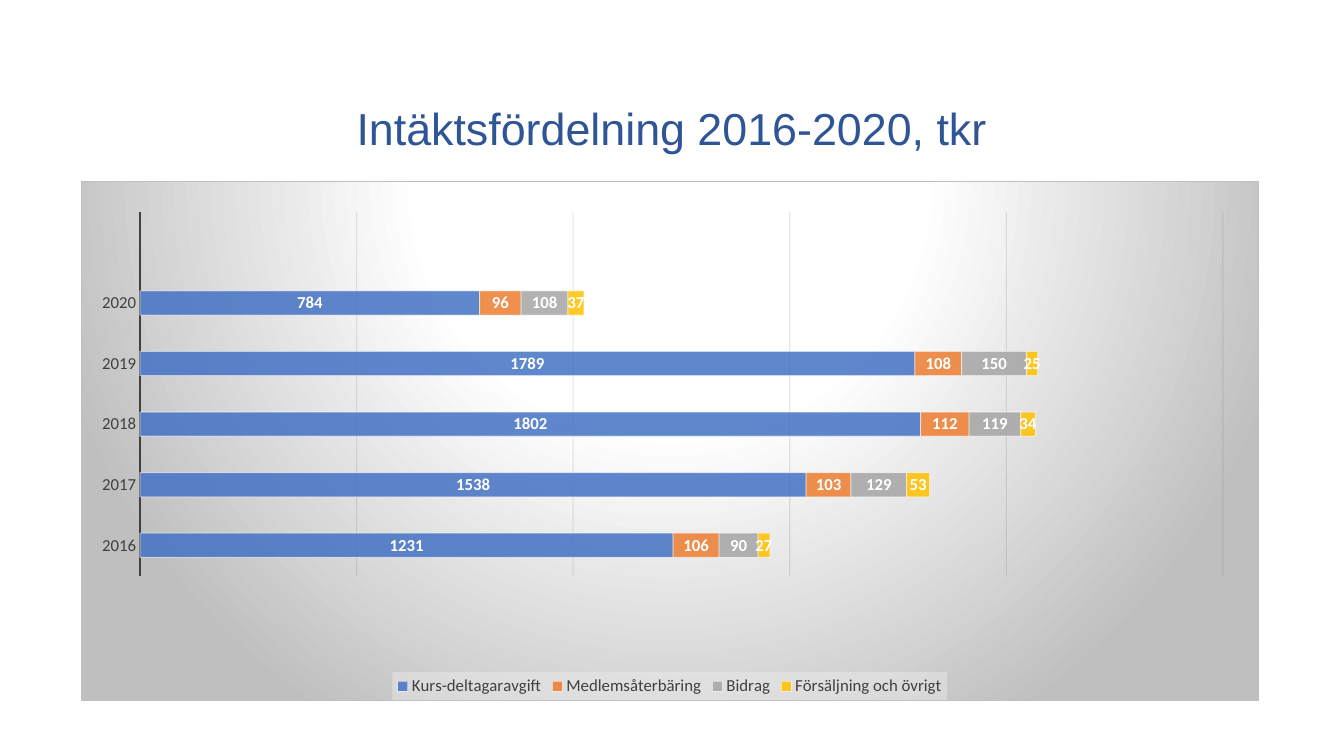
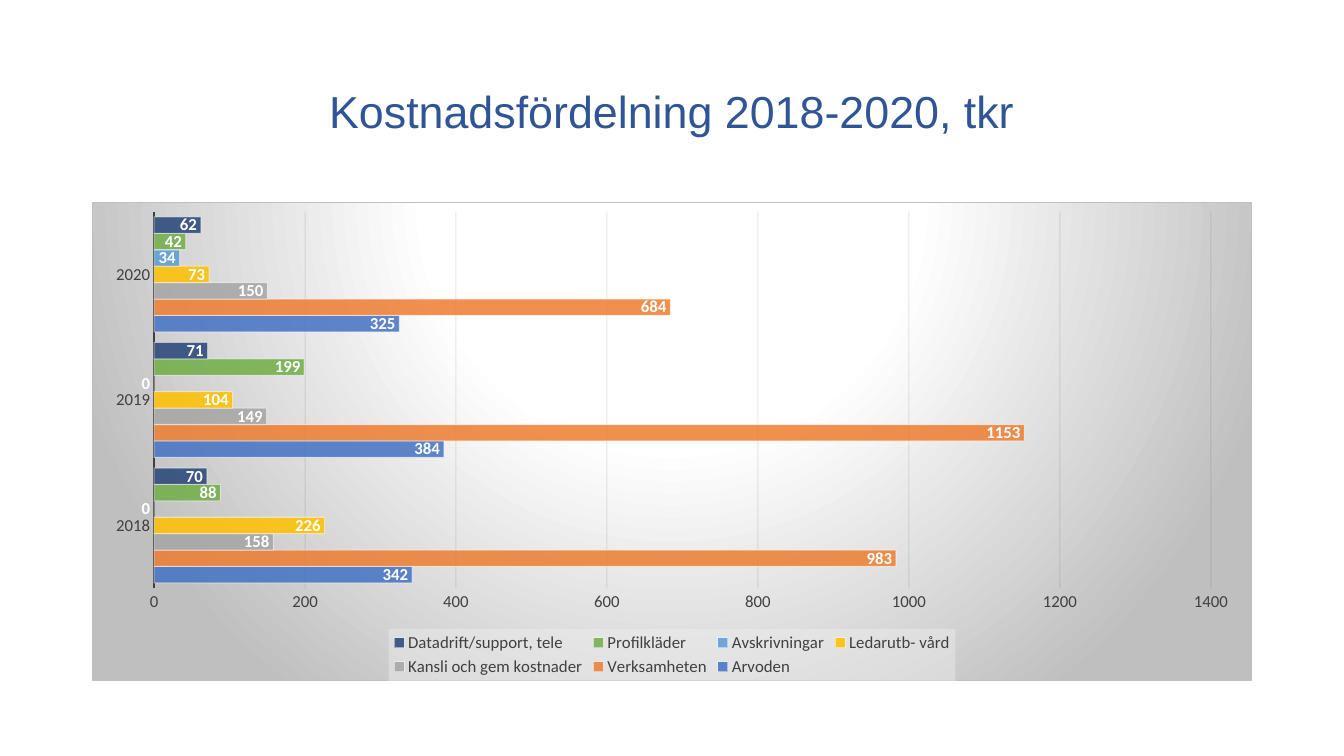
import pptx
import pptx.chart.data
import pptx.dml.color
import pptx.enum.chart
import pptx.enum.text
import pptx.oxml
import pptx.oxml.ns
import pptx.util

Pt = pptx.util.Pt
KINDS = pptx.enum.chart.XL_CHART_TYPE
SPOTS = pptx.enum.chart.XL_LABEL_POSITION
TICKS = pptx.enum.chart.XL_TICK_MARK

BLUE, WHITE, DARK, GRID = "2F5597", "FFFFFF", "404040", "0D0D0D"
HUES = ["4472C4", "ED7D31", "A5A5A5", "FFC000", "5B9BD5", "70AD47", "264478"]
SPACES = pptx.oxml.ns.nsdecls("c", "a")

PANEL = """<a:gradFill><a:gsLst>
<a:gs pos="0"><a:srgbClr val="FFFFFF"/></a:gs>
<a:gs pos="39000"><a:srgbClr val="FFFFFF"/></a:gs>
<a:gs pos="100000"><a:srgbClr val="BFBFBF"/></a:gs></a:gsLst>
<a:path path="circle"><a:fillToRect l="50000" t="-80000" r="50000" b="180000"/></a:path>
</a:gradFill><a:ln w="9525"><a:solidFill><a:srgbClr val="BFBFBF"/></a:solidFill></a:ln>"""
VEIL = """<a:solidFill><a:srgbClr val="F2F2F2"><a:alpha val="39000"/></a:srgbClr></a:solidFill>
<a:ln><a:noFill/></a:ln>"""

INCOME = {
    "Kurs-deltagaravgift": (1231, 1538, 1802, 1789, 784, None),
    "Medlemsåterbäring": (106, 103, 112, 108, 96, None),
    "Bidrag": (90, 129, 119, 150, 108, None),
    "Försäljning och övrigt": (27, 53, 34, 25, 37, None),
}
COSTS = {
    "Arvoden": (342, 384, 325),
    "Verksamheten": (983, 1153, 684),
    "Kansli och gem kostnader": (158, 149, 150),
    "Ledarutb- vård": (226, 104, 73),
    "Avskrivningar": (0, 0, 34),
    "Profilkläder": (88, 199, 42),
    "Datadrift/support, tele": (70, 71, 62),
}


def color(code):
    """Turn a hex string into a colour."""
    return pptx.dml.color.RGBColor.from_string(code)


def style(font, size, code, name="Calibri", bold=False):
    """Set size, colour, face and weight of a font."""
    font.size, font.name, font.bold = Pt(size), name, bold
    font.color.rgb = color(code)


def stroke(line, code, width):
    """Give a line its colour and width."""
    line.color.rgb = color(code)
    line.width = Pt(width)


def fade(chart, query, share):
    """Set the opacity, in percent, of the colours that a query finds."""
    for node in chart.element.xpath(query + "/a:solidFill/a:srgbClr"):
        node.append(pptx.oxml.parse_xml(f'<a:alpha {SPACES} val="{share * 1000}"/>'))


def paint(chart, query, look):
    """Fill the chart part whose text settings a query finds."""
    part = pptx.oxml.parse_xml(f"<c:spPr {SPACES}>{look}</c:spPr>")
    chart.element.xpath(query)[0].addprevious(part)


def place(chart, box):
    """Fix the inner plot area as shares of the chart."""
    area = chart.element.xpath(".//c:plotArea")[0]
    for old in area.xpath("c:layout"):
        area.remove(old)
    rules = [("layoutTarget", "inner"), ("xMode", "edge"), ("yMode", "edge")]
    rules += zip("xywh", box)
    marks = "".join(f'<c:{tag} val="{val}"/>' for tag, val in rules)
    area.insert(0, pptx.oxml.parse_xml(
        f"<c:layout {SPACES}><c:manualLayout>{marks}</c:manualLayout></c:layout>"))


def head(deck, text, height):
    """Add a slide with a centred title."""
    slide = deck.slides.add_slide(deck.slide_layouts[5])
    title = slide.shapes.title
    title.left, title.top, title.width, title.height = Pt(66), Pt(29), Pt(828), Pt(height)
    frame = title.text_frame
    frame.text = text
    frame.vertical_anchor = pptx.enum.text.MSO_ANCHOR.MIDDLE
    para = frame.paragraphs[0]
    para.alignment = pptx.enum.text.PP_ALIGN.CENTER
    para.line_spacing = 0.9
    style(para.font, 32, BLUE, "Arial")
    return slide


def axes(chart, top, step):
    """Format both axes and the grid."""
    cat, val = chart.category_axis, chart.value_axis
    for axis in (cat, val):
        axis.major_tick_mark = axis.minor_tick_mark = TICKS.NONE
        style(axis.tick_labels.font, 12, DARK)
    stroke(cat.format.line, DARK, 1.5)
    val.format.line.fill.background()
    val.minimum_scale, val.maximum_scale, val.major_unit = 0, top, step
    val.has_major_gridlines = True
    stroke(val.major_gridlines.format.line, GRID, 0.75)
    fade(chart, ".//c:majorGridlines/c:spPr/a:ln", 10)


def bars(chart, spot):
    """Colour and label each series."""
    for row, hue in zip(chart.plots[0].series, HUES):
        row.invert_if_negative = False
        row.format.fill.solid()
        row.format.fill.fore_color.rgb = color(hue)
        stroke(row.format.line, WHITE, 0.75)
        tags = row.data_labels
        tags.show_value, tags.position = True, spot
        style(tags.font, 12, WHITE, bold=True)
    fade(chart, ".//c:ser/c:spPr", 85)
    fade(chart, ".//c:ser/c:spPr/a:ln", 50)


def key(chart):
    """Add the legend below the plot."""
    chart.has_legend = True
    chart.legend.position = pptx.enum.chart.XL_LEGEND_POSITION.BOTTOM
    chart.legend.include_in_layout = False
    style(chart.legend.font, 12, DARK)
    paint(chart, ".//c:legend/c:txPr", VEIL)


def graph(slide, kind, box, cats, rows, gap, spot, top, step):
    """Add a bar chart on a shaded panel."""
    data = pptx.chart.data.CategoryChartData()
    data.categories = cats
    for name, vals in rows.items():
        data.add_series(name, vals)
    chart = slide.shapes.add_chart(kind, *map(Pt, box), data).chart
    chart.has_title = False
    style(chart.font, 10, "000000")
    paint(chart, "c:txPr", PANEL)
    chart.plots[0].gap_width = gap
    chart.plots[0].vary_by_categories = False
    axes(chart, top, step)
    bars(chart, spot)
    key(chart)
    return chart


def main():
    """Build and save the deck."""
    deck = pptx.Presentation()
    deck.slide_width, deck.slide_height = Pt(960), Pt(540)

    slide = head(deck, "Intäktsfördelning 2016-2020, tkr", 129)
    years = [str(year) for year in range(2016, 2021)]
    chart = graph(slide, KINDS.BAR_STACKED, (57.6, 129, 841.6, 371.5), years + [""],
                  INCOME, 150, SPOTS.CENTER, 2500, 500)
    chart.value_axis.visible = False
    place(chart, (0.05, 0.06, 0.92, 0.7))

    slide = head(deck, "Kostnadsfördelning 2018-2020, tkr", 104.4)
    graph(slide, KINDS.BAR_CLUSTERED, (66, 144, 828, 342.7), years[2:],
          COSTS, 65, SPOTS.INSIDE_END, 1400, 200)

    deck.save("out.pptx")


if __name__ == "__main__":
    main()
